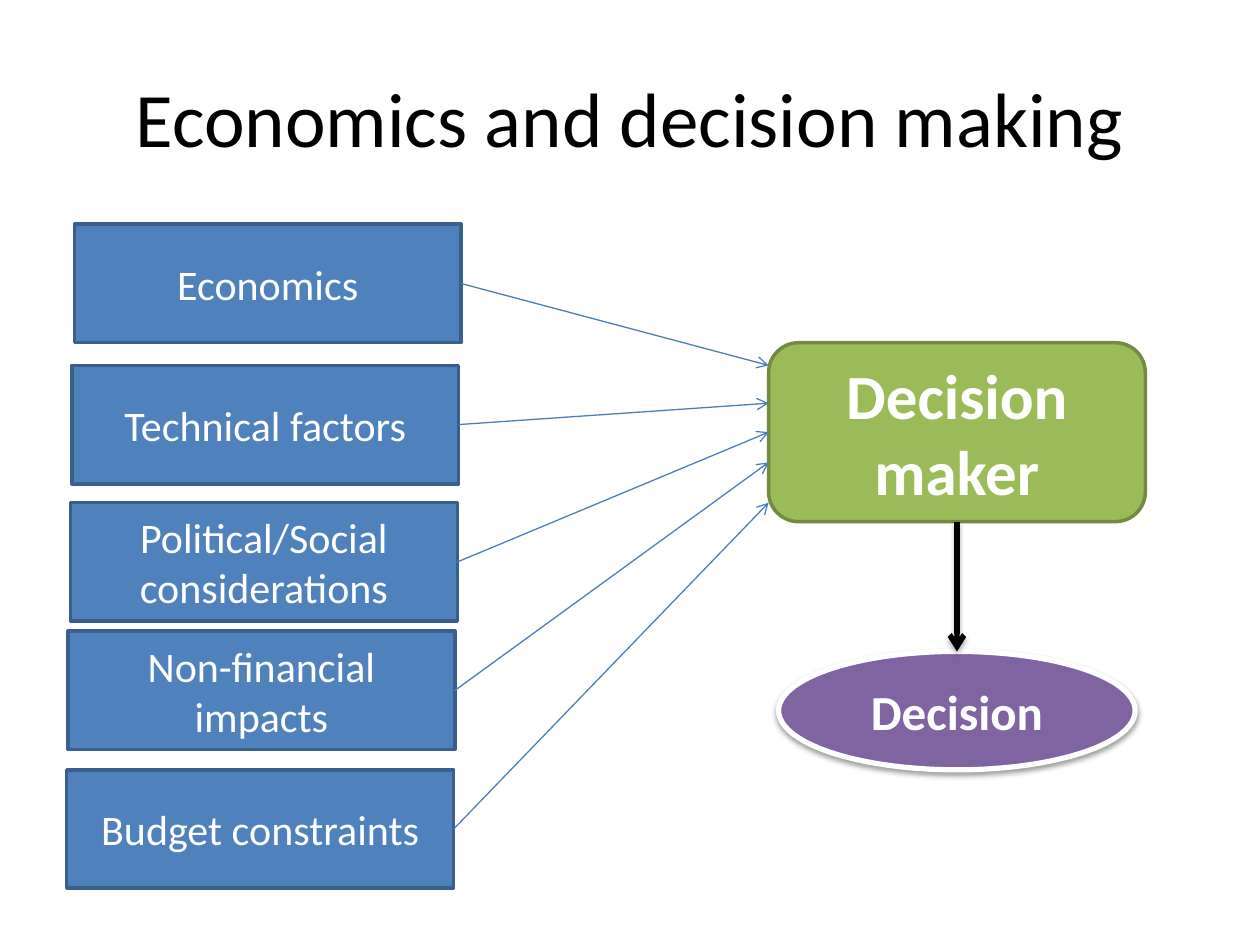
import pptx
import pptx.util
import pptx.dml.color
import pptx.enum.shapes
import pptx.enum.text
import pptx.oxml
import pptx.oxml.ns
from lxml import etree

Inches = pptx.util.Inches
Pt = pptx.util.Pt
Kind = pptx.enum.shapes.MSO_SHAPE
qn = pptx.oxml.ns.qn

# left, top and text of each factor; y where its arrow meets the maker box
FACTORS = [
    (0.59, 1.78, "Economics", 2.9),
    (0.57, 2.9, "Technical factors", 3.2),
    (0.56, 3.99, "Political/Social considerations", 3.43),
    (0.54, 5.01, "Non-financial impacts", 3.67),
    (0.53, 6.11, "Budget constraints", 3.99),
]


def color(code):
    return pptx.dml.color.RGBColor.from_string(code)


def write(frame, text, size=24, fill="FFFFFF", bold=False):
    frame.word_wrap = True
    frame.vertical_anchor = pptx.enum.text.MSO_ANCHOR.MIDDLE
    para = frame.paragraphs[0]
    para.alignment = pptx.enum.text.PP_ALIGN.CENTER
    run = para.add_run()
    run.text = text
    font = run.font
    font.name, font.size, font.bold = "Calibri", Pt(size), bold
    font.color.rgb = color(fill)


def shade(props, dist, alpha):
    """Put a soft shadow below the part that owns these properties."""
    effect = props.find(qn("a:effectLst"))
    outer = etree.SubElement(
        effect, qn("a:outerShdw"), blurRad=str(Pt(3.1)), dist=str(Pt(dist)),
        dir="5400000", rotWithShape="0")
    tint = etree.SubElement(outer, qn("a:srgbClr"), val="000000")
    etree.SubElement(tint, qn("a:alpha"), val=str(alpha * 1000))


def block(slide, kind, box, text, fill, edge, width=2, **style):
    shape = slide.shapes.add_shape(kind, *map(Inches, box))
    shape.shadow.inherit = False
    shape.fill.solid()
    shape.fill.fore_color.rgb = color(fill)
    shape.line.color.rgb = color(edge)
    shape.line.width = Pt(width)
    write(shape.text_frame, text, **style)
    return shape


def arrow(slide, start, end, edge="4B7EBC", width=0.75):
    link = slide.shapes.add_connector(
        pptx.enum.shapes.MSO_CONNECTOR.STRAIGHT, *map(Inches, start + end))
    link.line.color.rgb = color(edge)
    link.line.width = Pt(width)
    props = link._element.spPr
    etree.SubElement(props.find(qn("a:ln")), qn("a:tailEnd"), type="arrow")
    etree.SubElement(props, qn("a:effectLst"))
    return link


def heading(slide, box, text):
    title = slide.shapes.title
    title.left, title.top, title.width, title.height = map(Inches, box)
    write(title.text_frame, text, size=44, fill="000000")


def inputs(slide, size):
    """Column of factor boxes."""
    return [block(slide, Kind.RECTANGLE, (left, top) + size, text,
                  "4F81BD", "3A5F8C")
            for left, top, text, _ in FACTORS]


def outcome(slide, box):
    """Decision maker above, decision below, within the box."""
    left, top, width, height = box
    maker = block(slide, Kind.ROUNDED_RECTANGLE, (left, top, width, 1.42),
                  "Decision maker", "9BBB59", "738A42", size=36, bold=True)
    wide, tall = 2.83, 0.94
    oval = (left + (width - wide) / 2, top + height - tall, wide, tall)
    result = block(slide, Kind.OVAL, oval, "Decision", "8064A2", "FFFFFF",
                   width=3, size=28, bold=True)
    shade(result._element.spPr, 1.6, 38)
    return maker, result


def links(slide, boxes, size, maker, result):
    wide, tall = size
    edge = maker.left / Inches(1)
    middle = maker.top + maker.height / 2
    # Factors to decision maker
    for (left, top, _, end), box in zip(FACTORS, boxes):
        link = arrow(slide, (left + wide, top + tall / 2), (edge, end))
        link.begin_connect(box, 3)
        if abs(Inches(end) - middle) < Inches(0.01):
            link.end_connect(maker, 1)
    # Decision maker to decision
    link = arrow(slide, (7.6, 4.14), (7.6, 5.17), edge="000000", width=3)
    link.begin_connect(maker, 2)
    link.end_connect(result, 0)
    shade(link._element.spPr, 1.8, 35)


def main():
    deck = pptx.Presentation()
    deck.slide_width, deck.slide_height = Inches(10), Inches(7.5)
    slide = deck.slides.add_slide(deck.slide_layouts[5])
    size = (3.07, 0.94)
    heading(slide, (0.5, 0.3, 9, 1.25), "Economics and decision making")
    boxes = inputs(slide, size)
    maker, result = outcome(slide, (6.1, 2.72, 2.99, 3.39))
    links(slide, boxes, size, maker, result)
    deck.save("out.pptx")


if __name__ == "__main__":
    main()
